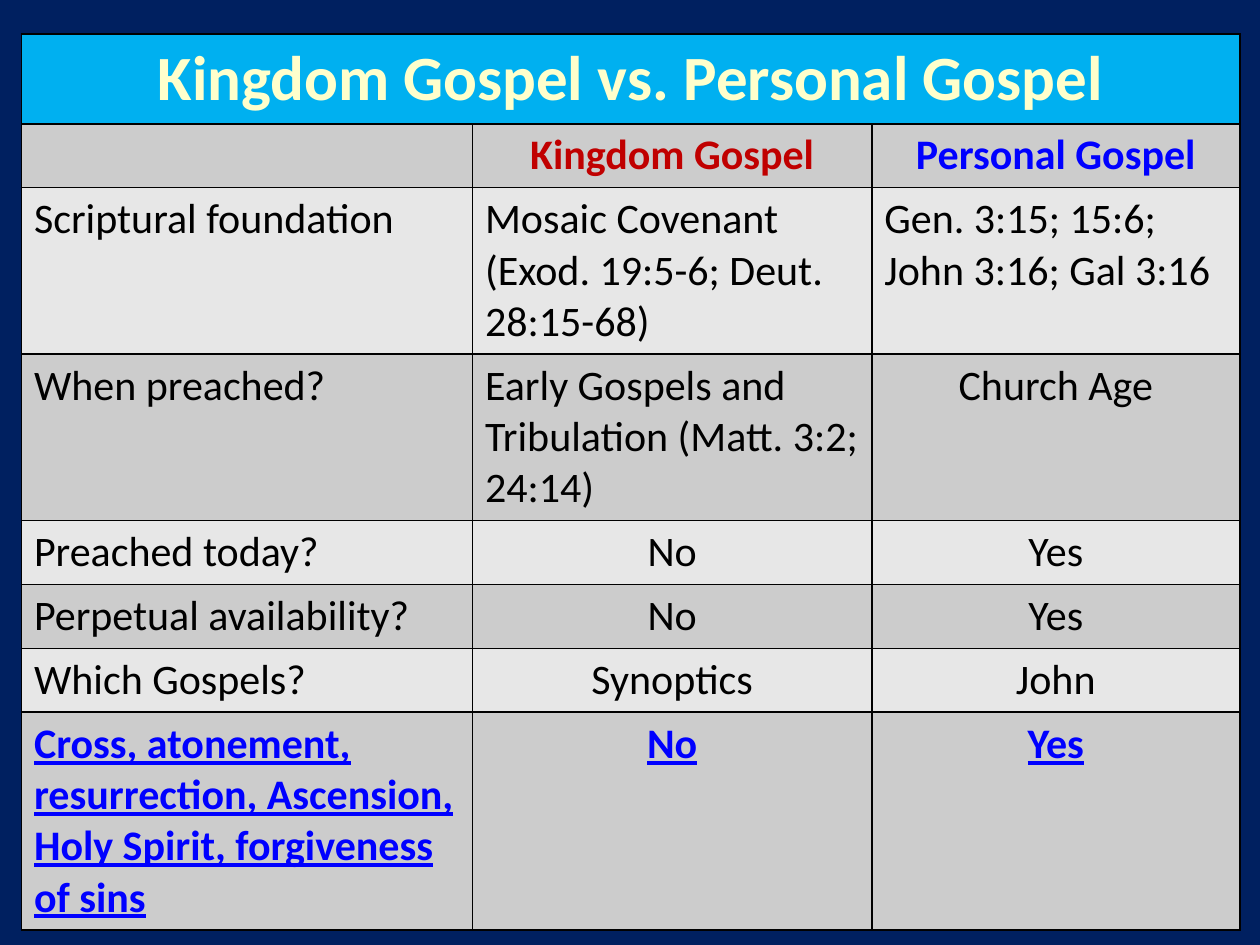
import dataclasses
import pptx
import pptx.dml.color
import pptx.enum.text
import pptx.oxml
import pptx.oxml.ns
import pptx.util

ALIGN = pptx.enum.text.PP_ALIGN


@dataclasses.dataclass(frozen=True)
class Theme:
    font: str = "Calibri"
    back: str = "002060"
    banner: str = "00B0F0"
    cream: str = "FFFFCC"
    dark: str = "CCCCCC"
    light: str = "E7E7E7"
    ink: str = "000000"
    red: str = "C00000"
    blue: str = "0000FF"
    title: int = 36
    body: int = 24
    line: int = 1


def rgb(code):
    return pptx.dml.color.RGBColor.from_string(code)


def write(frame, text, *, font, size, color, bold=False, under=False, align=ALIGN.LEFT):
    frame.text = text
    for para in frame.paragraphs:
        para.alignment = align
        for run in para.runs:
            run.font.name = font
            run.font.size = pptx.util.Pt(size)
            run.font.bold = bold
            run.font.underline = under
            run.font.color.rgb = rgb(color)


def border(cell, color, width):
    props = cell._tc.get_or_add_tcPr()
    for spot, side in enumerate(("lnL", "lnR", "lnT", "lnB")):
        props.insert(spot, pptx.oxml.parse_xml(
            f'<a:{side} {pptx.oxml.ns.nsdecls("a")} w="{pptx.util.Pt(width)}">'
            f'<a:solidFill><a:srgbClr val="{color}"/></a:solidFill></a:{side}>'))


class Deck:
    """Slide builder on a grid of 100 columns by 75 rows."""

    def __init__(self, theme):
        self.theme = theme
        self.prs = pptx.Presentation()
        self.prs.slide_width = pptx.util.Inches(10)
        self.prs.slide_height = pptx.util.Inches(7.5)
        self.slide = self.prs.slides.add_slide(self.prs.slide_layouts[6])
        fill = self.slide.background.fill
        fill.solid()
        fill.fore_color.rgb = rgb(theme.back)

    def x(self, cols):
        return int(self.prs.slide_width * cols / 100)

    def y(self, rows):
        return int(self.prs.slide_height * rows / 75)

    def table(self, left, top, widths, heights):
        grid = self.slide.shapes.add_table(
            len(heights), len(widths), self.x(left), self.y(top),
            self.x(sum(widths)), self.y(sum(heights))).table
        grid.first_row = grid.horz_banding = False
        for col, width in zip(grid.columns, widths):
            col.width = self.x(width)
        for row, height in zip(grid.rows, heights):
            row.height = self.y(height)
        return grid

    def cell(self, cell, text, fill, **style):
        cell.fill.solid()
        cell.fill.fore_color.rgb = rgb(fill)
        border(cell, self.theme.ink, self.theme.line)
        look = dict(font=self.theme.font, size=self.theme.body, color=self.theme.ink)
        write(cell.text_frame, text, **(look | style))


def main():
    theme = Theme()
    deck = Deck(theme)
    mid = ALIGN.CENTER
    topics = [
        ("Scriptural foundation",
         "Mosaic Covenant\n(Exod. 19:5-6; Deut. 28:15-68)",
         "Gen. 3:15; 15:6; John 3:16; Gal 3:16"),
        ("When preached?",
         "Early Gospels and Tribulation (Matt. 3:2; 24:14)",
         "Church Age"),
        ("Preached today?", "No", "Yes"),
        ("Perpetual availability?", "No", "Yes"),
        ("Which Gospels?", "Synoptics", "John"),
        ("Cross, atonement, resurrection, Ascension, Holy Spirit, forgiveness of sins",
         "No", "Yes"),
    ]
    # Text lines in each row: the title takes 1.5 body lines
    lines = [1.5, 1, 3, 3, 1, 1, 1, 4]
    grid = deck.table(1.7, 2.7, [35.8, 31.7, 29.2], [1 + 4.07 * n for n in lines])

    for col in range(3):
        deck.cell(grid.cell(0, col), "", theme.banner)
    grid.cell(0, 0).merge(grid.cell(0, 2))
    write(grid.cell(0, 0).text_frame, "Kingdom Gospel vs. Personal Gospel",
          font=theme.font, size=theme.title, color=theme.cream, bold=True, align=mid)

    heads = [("", theme.ink), ("Kingdom Gospel", theme.red),
             ("Personal Gospel", theme.blue)]
    for col, (text, color) in enumerate(heads):
        deck.cell(grid.cell(1, col), text, theme.dark, color=color, bold=True, align=mid)

    for row, topic in enumerate(topics, 2):
        fill = theme.dark if row % 2 else theme.light
        last = topic is topics[-1]
        style = dict(color=theme.blue, bold=True, under=True) if last else {}
        for col, text in enumerate(topic):
            # Short answers are centred; labels and long passages are not
            short = col > 0 and len(text) < 12
            deck.cell(grid.cell(row, col), text, fill,
                      align=mid if short else ALIGN.LEFT, **style)

    deck.prs.save("out.pptx")


if __name__ == "__main__":
    main()
